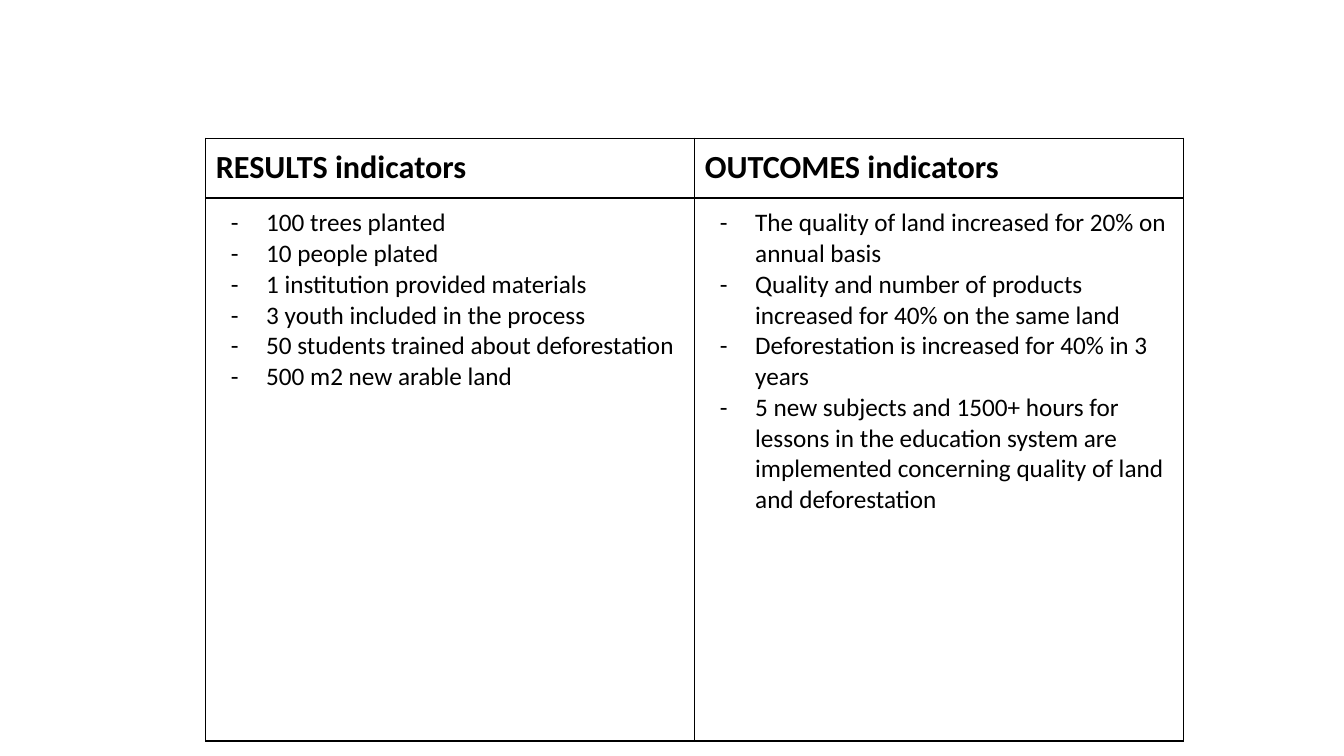
from dataclasses import dataclass

from lxml import etree
from pptx import Presentation
from pptx import util as u
from pptx.dml.color import RGBColor
from pptx.oxml import ns

HUES = {"ink": "000000", "paper": "FFFFFF"}
EDGES = {"lnL": 0.75, "lnR": 0.75, "lnT": 0.75, "lnB": 1.25}
HEAD = {"name": "Calibri", "size": u.Pt(23), "bold": True}
BODY = {"name": "Calibri", "size": u.Pt(18), "bold": False}
PADS = ("margin_left", "margin_right", "margin_top", "margin_bottom")
ROWS = (0.59, 5.39)
WIDTH = 4.85


@dataclass
class Column:
    title: str
    items: list[str]


COLUMNS = [
    Column("RESULTS indicators", [
        "100 trees planted",
        "10 people plated",
        "1 institution provided materials",
        "3 youth included in the process",
        "50 students trained about deforestation",
        "500 m2 new arable land",
    ]),
    Column("OUTCOMES indicators", [
        "The quality of land increased for 20% on annual basis",
        "Quality and number of products increased for 40% on the same land",
        "Deforestation is increased for 40% in 3 years",
        "5 new subjects and 1500+ hours for lessons in the education system "
        "are implemented concerning quality of land and deforestation",
    ]),
]


def add_edges(cell) -> None:
    props = cell._tc.get_or_add_tcPr()
    for spot, (tag, width) in enumerate(EDGES.items()):
        line = etree.Element(ns.qn(f"a:{tag}"), w=str(u.Pt(width)))
        fill = etree.SubElement(line, ns.qn("a:solidFill"))
        etree.SubElement(fill, ns.qn("a:srgbClr"), val=HUES["ink"])
        props.insert(spot, line)


def add_dash(para) -> None:
    props = para._p.get_or_add_pPr()
    props.set("marL", str(u.Inches(0.5)))
    props.set("indent", str(u.Inches(-0.35)))
    etree.SubElement(props, ns.qn("a:buFont"), typeface="Calibri")
    etree.SubElement(props, ns.qn("a:buChar"), char="-")


def fill_cell(cell, lines: list[str], style: dict, dashed: bool) -> None:
    for pad in PADS:
        setattr(cell, pad, u.Inches(0.1))
    cell.fill.solid()
    cell.fill.fore_color.rgb = RGBColor.from_string(HUES["paper"])
    add_edges(cell)
    frame = cell.text_frame
    frame.text = "\n".join(lines)
    for para in frame.paragraphs:
        if dashed:
            add_dash(para)
        font = para.runs[0].font
        for key, value in style.items():
            setattr(font, key, value)
        font.color.rgb = RGBColor.from_string(HUES["ink"])


def main() -> None:
    deck = Presentation()
    deck.slide_width = u.Inches(13.33)
    deck.slide_height = u.Inches(7.5)
    slide = deck.slides.add_slide(deck.slide_layouts[6])
    table = slide.shapes.add_table(
        len(ROWS), len(COLUMNS), u.Inches(2.04), u.Inches(1.37),
        u.Inches(WIDTH * len(COLUMNS)), u.Inches(sum(ROWS))).table
    table.first_row = False
    table.horz_banding = False
    for row, height in zip(table.rows, ROWS):
        row.height = u.Inches(height)
    for spot, column in enumerate(COLUMNS):
        table.columns[spot].width = u.Inches(WIDTH)
        fill_cell(table.cell(0, spot), [column.title], HEAD, False)
        fill_cell(table.cell(1, spot), column.items, BODY, True)
    deck.save("out.pptx")


if __name__ == "__main__":
    main()
